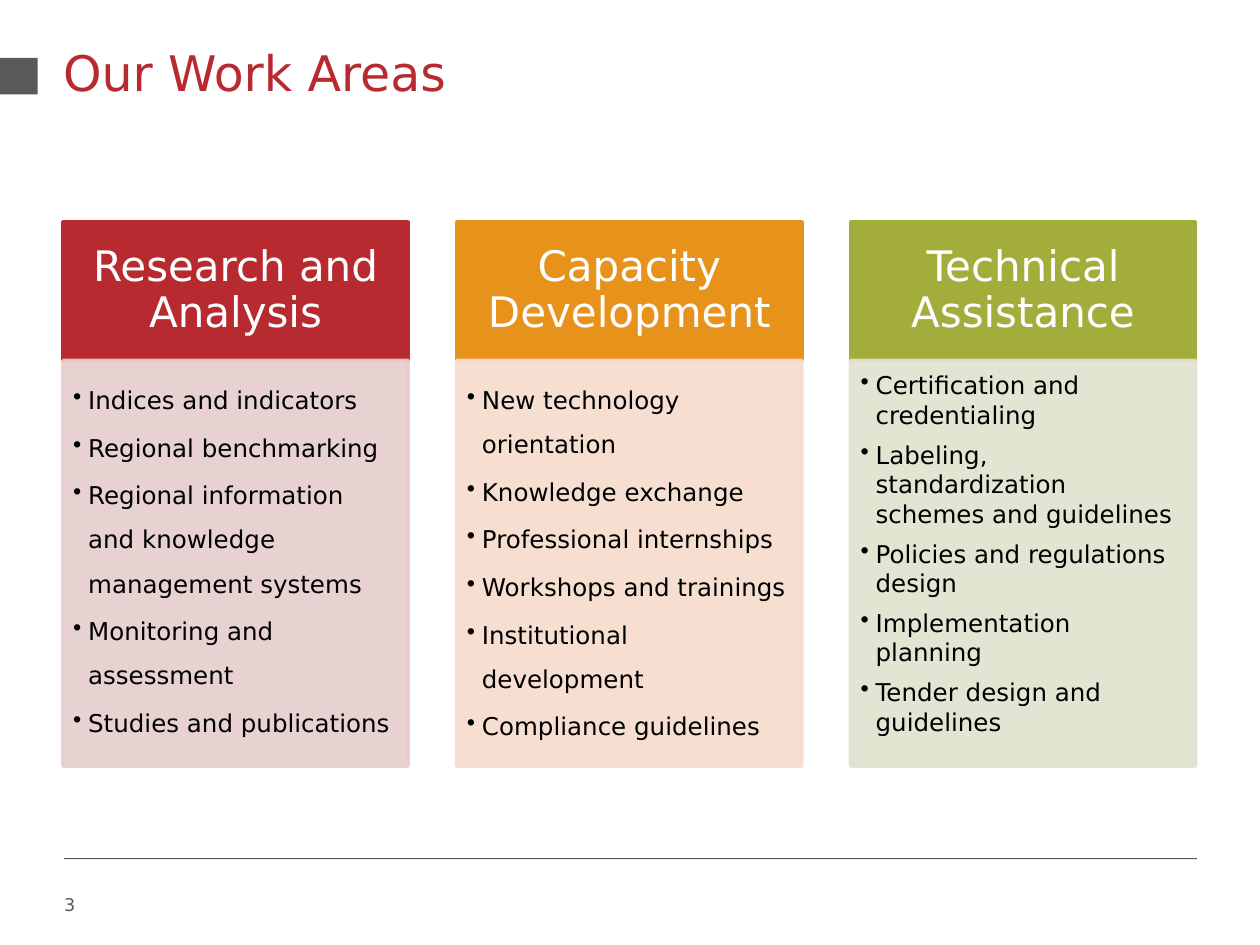
from dataclasses import dataclass

from lxml import etree
from pptx import Presentation
from pptx.dml.color import RGBColor
from pptx.enum.shapes import MSO_SHAPE
from pptx.enum.text import MSO_ANCHOR, MSO_AUTO_SIZE, PP_ALIGN
from pptx.oxml.ns import qn
from pptx.util import Inches, Pt

RECTANGLE = MSO_SHAPE.RECTANGLE
TOP, MIDDLE = MSO_ANCHOR.TOP, MSO_ANCHOR.MIDDLE
LEFT, CENTER = PP_ALIGN.LEFT, PP_ALIGN.CENTER
NO_AUTOFIT = MSO_AUTO_SIZE.NONE
TITLE_ONLY_LAYOUT = 5


@dataclass(frozen=True)
class Theme:
    font: str = "DejaVu Sans"
    accent: str = "B72A2F"
    gray: str = "595959"
    white: str = "FFFFFF"
    black: str = "000000"
    title_size: int = 28
    heading_size: int = 24
    item_size: int = 14
    number_size: int = 10
    panel_opacity: int = 90


@dataclass(frozen=True)
class WorkArea:
    heading: str
    color: str
    tint: str
    items: tuple
    line_spacing: float
    space_after: int


THEME = Theme()
FIRST_LEFT, COLUMN_STEP, COLUMN_WIDTH = 0.5, 3.125, 2.74
HEADING_TOP, HEADING_HEIGHT, PANEL_HEIGHT = 1.76, 1.1, 3.22

WORK_AREAS = (
    WorkArea("Research and Analysis", THEME.accent, "E6CDCD", (
        "Indices and indicators",
        "Regional benchmarking",
        "Regional information and knowledge management systems",
        "Monitoring and assessment",
        "Studies and publications",
    ), 1.5, 2),
    WorkArea("Capacity Development", "E7921A", "F6DCCD", (
        "New technology orientation",
        "Knowledge exchange",
        "Professional internships",
        "Workshops and trainings",
        "Institutional development",
        "Compliance guidelines",
    ), 1.5, 2),
    WorkArea("Technical Assistance", "A3AD3C", "E0E3CE", (
        "Certification and credentialing",
        "Labeling, standardization schemes and guidelines",
        "Policies and regulations design",
        "Implementation planning",
        "Tender design and guidelines",
    ), 1.0, 6),
)


def set_frame(frame, insets, anchor=TOP):
    """Insets are left, top, right, bottom in inches."""
    frame.word_wrap = True
    frame.auto_size = NO_AUTOFIT
    frame.vertical_anchor = anchor
    (frame.margin_left, frame.margin_top,
     frame.margin_right, frame.margin_bottom) = map(Inches, insets)


def style_paragraph(paragraph, size, color, align=LEFT):
    paragraph.alignment = align
    paragraph.font.name = THEME.font
    paragraph.font.size = Pt(size)
    paragraph.font.color.rgb = RGBColor.from_string(color)


def add_block(slide, left, top, width, height, color, outlined=False):
    block = slide.shapes.add_shape(
        RECTANGLE, Inches(left), Inches(top), Inches(width), Inches(height))
    block.shadow.inherit = False
    block.fill.solid()
    block.fill.fore_color.rgb = RGBColor.from_string(color)
    if outlined:
        block.line.color.rgb = RGBColor.from_string(color)
        block.line.width = Pt(2)
    else:
        block.line.fill.background()
    return block


def set_opacity(block, percent):
    """Apply the opacity to both fill and outline."""
    for color in block.fill._xPr.iter(qn("a:srgbClr")):
        etree.SubElement(color, qn("a:alpha"), val=str(percent * 1000))


def add_bullet(paragraph, indent):
    properties = paragraph._p.get_or_add_pPr()
    properties.set("marL", str(Inches(indent)))
    properties.set("indent", str(-Inches(indent)))
    etree.SubElement(properties, qn("a:buChar"), char="•")


def add_title(slide, text):
    title = slide.shapes.title
    title.left, title.top = Inches(0.5), Inches(0.29)
    title.width, title.height = Inches(9), Inches(0.97)
    set_frame(title.text_frame, (0, 0.05, 0, 0.05))
    title.text_frame.text = text
    style_paragraph(title.text_frame.paragraphs[0],
                    THEME.title_size, THEME.accent)


def add_slide_number(slide, number):
    box = slide.shapes.add_textbox(
        Inches(0.51), Inches(7.05), Inches(2.33), Inches(0.4))
    set_frame(box.text_frame, (0, 0.05, 0, 0.05))
    box.text_frame.text = number
    style_paragraph(box.text_frame.paragraphs[0],
                    THEME.number_size, THEME.gray)


def add_heading(slide, left, area):
    block = add_block(slide, left, HEADING_TOP, COLUMN_WIDTH, HEADING_HEIGHT,
                      area.color, outlined=True)
    set_frame(block.text_frame, (0.19, 0.11, 0.19, 0.11), MIDDLE)
    block.text_frame.text = area.heading
    heading = block.text_frame.paragraphs[0]
    heading.line_spacing = 0.9
    style_paragraph(heading, THEME.heading_size, THEME.white, CENTER)


def add_item_panel(slide, left, area):
    panel = add_block(slide, left, HEADING_TOP + HEADING_HEIGHT, COLUMN_WIDTH,
                      PANEL_HEIGHT, area.tint, outlined=True)
    set_opacity(panel, THEME.panel_opacity)
    set_frame(panel.text_frame, (0.08, 0.08, 0.11, 0.12))
    panel.text_frame.text = "\n".join(area.items)
    for item in panel.text_frame.paragraphs:
        item.level = 1
        add_bullet(item, 0.12)
        item.line_spacing = area.line_spacing
        item.space_after = Pt(area.space_after)
        style_paragraph(item, THEME.item_size, THEME.black)


def main():
    presentation = Presentation()
    presentation.slide_width, presentation.slide_height = Inches(10), Inches(7.5)
    slide = presentation.slides.add_slide(
        presentation.slide_layouts[TITLE_ONLY_LAYOUT])

    add_block(slide, 0, 0.46, 0.3, 0.29, THEME.gray)
    add_block(slide, 0.51, 6.81, 8.99, 0.01, THEME.gray)
    add_slide_number(slide, "3")
    add_title(slide, "Our Work Areas")
    for column, area in enumerate(WORK_AREAS):
        left = FIRST_LEFT + column * COLUMN_STEP
        add_heading(slide, left, area)
        add_item_panel(slide, left, area)

    presentation.save("out.pptx")


if __name__ == "__main__":
    main()
